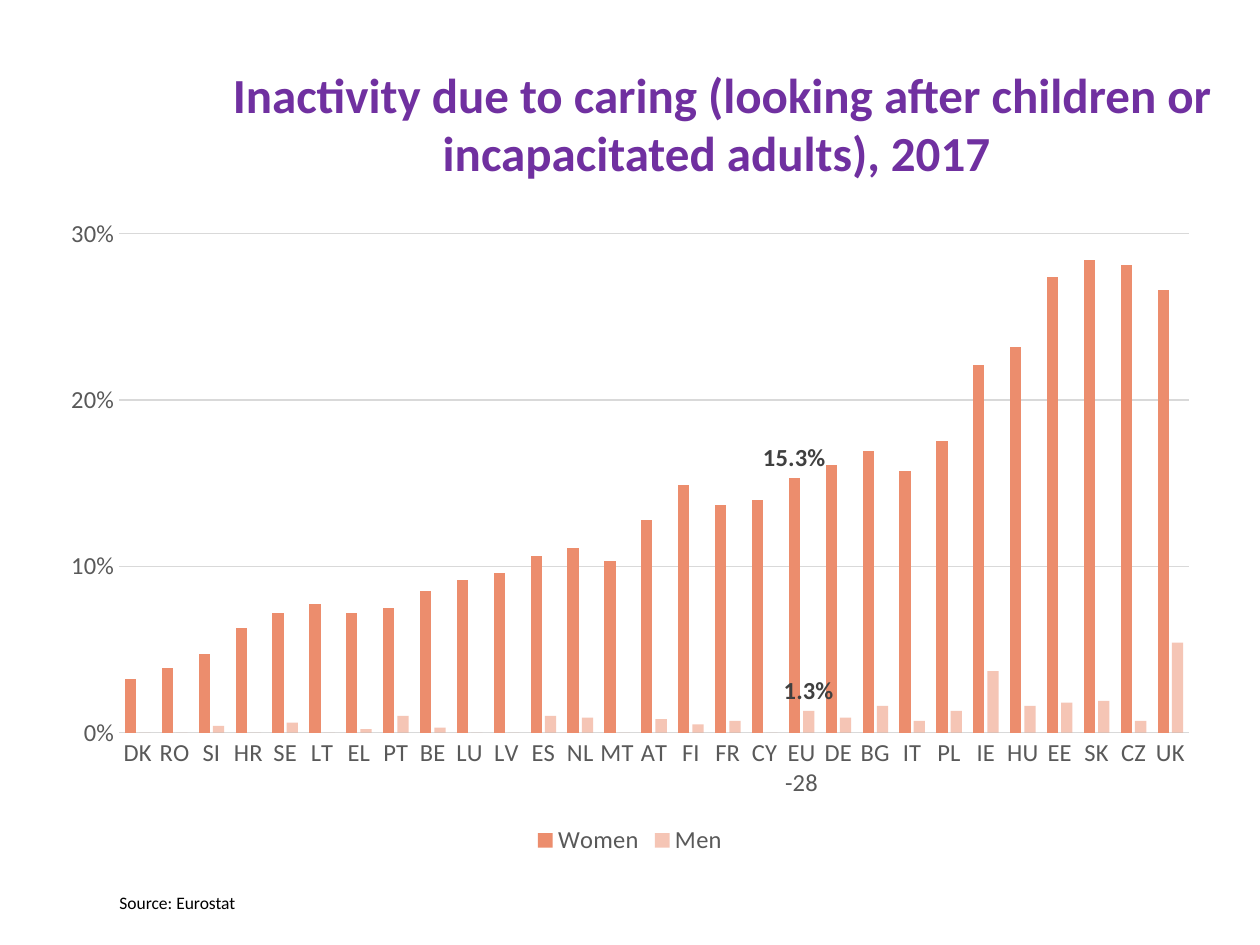
import pptx
import pptx.chart.data
import pptx.dml.color
import pptx.enum.chart
import pptx.enum.text
import pptx.oxml
import pptx.oxml.ns
import pptx.util
from dataclasses import dataclass
from lxml import etree
from pptx.util import Inches

RGB = pptx.dml.color.RGBColor.from_string


@dataclass(frozen=True)
class Theme:
    font: str = "Calibri"
    title: str = "7030A0"
    text: str = "000000"
    axis: str = "595959"
    label: str = "404040"
    grid: str = "D9D9D9"
    bar: str = "EC8D6D"
    title_size: int = 28
    chart_size: int = 14
    source_size: int = 10


THEME = Theme()

COUNTRIES = ("DK RO SI HR SE LT EL PT BE LU LV ES NL MT AT FI FR CY EU-28 "
             "DE BG IT PL IE HU EE SK CZ UK").split()
WOMEN = [0.032, 0.039, 0.047, 0.063, 0.072, 0.077, 0.072, 0.075, 0.085, 0.092,
         0.096, 0.106, 0.111, 0.103, 0.128, 0.149, 0.137, 0.14, 0.153, 0.161,
         0.169, 0.157, 0.175, 0.221, 0.232, 0.274, 0.284, 0.281, 0.266]
MEN = [0, 0, 0.004, 0, 0.006, 0, 0.002, 0.01, 0.003, 0,
       0, 0.01, 0.009, 0, 0.008, 0.005, 0.007, 0, 0.013, 0.009,
       0.016, 0.007, 0.013, 0.037, 0.016, 0.018, 0.019, 0.007, 0.054]


def set_font(font, size, color, bold=False):
    font.name = THEME.font
    font.size = pptx.util.Pt(size)
    font.bold = bold
    font.color.rgb = RGB(color)


def set_line(line, color):
    line.color.rgb = RGB(color)
    line.width = pptx.util.Pt(0.75)


def add_text(s, box, text, size, color, bold=False, align=None, anchor=None):
    tf = s.shapes.add_textbox(*map(Inches, box)).text_frame
    tf.word_wrap = True
    tf.vertical_anchor = anchor
    p = tf.paragraphs[0]
    p.text = text
    p.alignment = align
    set_font(p.font, size, color, bold)
    return tf


def style_axes(chart):
    category, value = chart.category_axis, chart.value_axis
    for axis in (category, value):
        axis.major_tick_mark = pptx.enum.chart.XL_TICK_MARK.NONE
        axis.minor_tick_mark = pptx.enum.chart.XL_TICK_MARK.NONE
        set_font(axis.tick_labels.font, THEME.chart_size, THEME.axis)
    category.has_major_gridlines = False
    set_line(category.format.line, THEME.grid)
    value.minimum_scale, value.maximum_scale, value.major_unit = 0, 0.3, 0.1
    value.tick_labels.number_format = "0%"
    value.tick_labels.number_format_is_linked = False
    value.format.line.fill.background()
    set_line(value.major_gridlines.format.line, THEME.grid)


def style_series(series, alpha=None):
    series.invert_if_negative = False
    fill = series.format.fill
    fill.solid()
    fill.fore_color.rgb = RGB(THEME.bar)
    if alpha:
        color = series.format._element.find(".//" + pptx.oxml.ns.qn("a:srgbClr"))
        etree.SubElement(color, pptx.oxml.ns.qn("a:alpha"), val=str(alpha * 1000))


def label_point(series, index):
    label = series.points[index].data_label
    set_font(label.font, THEME.chart_size, THEME.label, bold=True)
    label.position = pptx.enum.chart.XL_LABEL_POSITION.OUTSIDE_END
    series.data_labels.show_value = False
    idx = series.data_labels._element.find(
        pptx.oxml.ns.qn("c:dLbl") + "/" + pptx.oxml.ns.qn("c:idx"))
    number_format = etree.Element(
        pptx.oxml.ns.qn("c:numFmt"), formatCode="0.0%", sourceLinked="0")
    idx.addnext(number_format)


def add_column_chart(s, box):
    data = pptx.chart.data.CategoryChartData(number_format="0.0%")
    data.categories = COUNTRIES
    data.add_series("Women", WOMEN)
    data.add_series("Men", MEN)
    chart = s.shapes.add_chart(
        pptx.enum.chart.XL_CHART_TYPE.COLUMN_CLUSTERED,
        *map(Inches, box), data).chart
    set_font(chart.font, 11, THEME.text)
    chart.has_title = False
    chart.has_legend = True
    chart.legend.position = pptx.enum.chart.XL_LEGEND_POSITION.BOTTOM
    chart.legend.include_in_layout = False
    set_font(chart.legend.font, THEME.chart_size, THEME.axis)
    style_axes(chart)
    plot = chart.plots[0]
    plot.vary_by_categories = False
    plot.gap_width, plot.overlap = 100, -27
    for series, alpha in zip(plot.series, (None, 50)):
        style_series(series, alpha)
        label_point(series, COUNTRIES.index("EU-28"))


def main():
    prs = pptx.Presentation()
    prs.slide_width, prs.slide_height = Inches(10), Inches(7.5)
    s = prs.slides.add_slide(prs.slide_layouts[6])
    add_text(s, (1.58, 0.42, 8.3, 1.11),
             "Inactivity due to caring (looking after children or "
             "incapacitated adults), 2017 ",
             THEME.title_size, THEME.title, bold=True,
             align=pptx.enum.text.PP_ALIGN.CENTER,
             anchor=pptx.enum.text.MSO_ANCHOR.MIDDLE)
    add_column_chart(s, (0.38, 1.63, 9.24, 5.2))
    tf = add_text(s, (0.85, 7.03, 8.84, 0.27), "Source: Eurostat",
                  THEME.source_size, THEME.text)
    tf.auto_size = pptx.enum.text.MSO_AUTO_SIZE.SHAPE_TO_FIT_TEXT
    prs.save("out.pptx")


if __name__ == "__main__":
    main()
